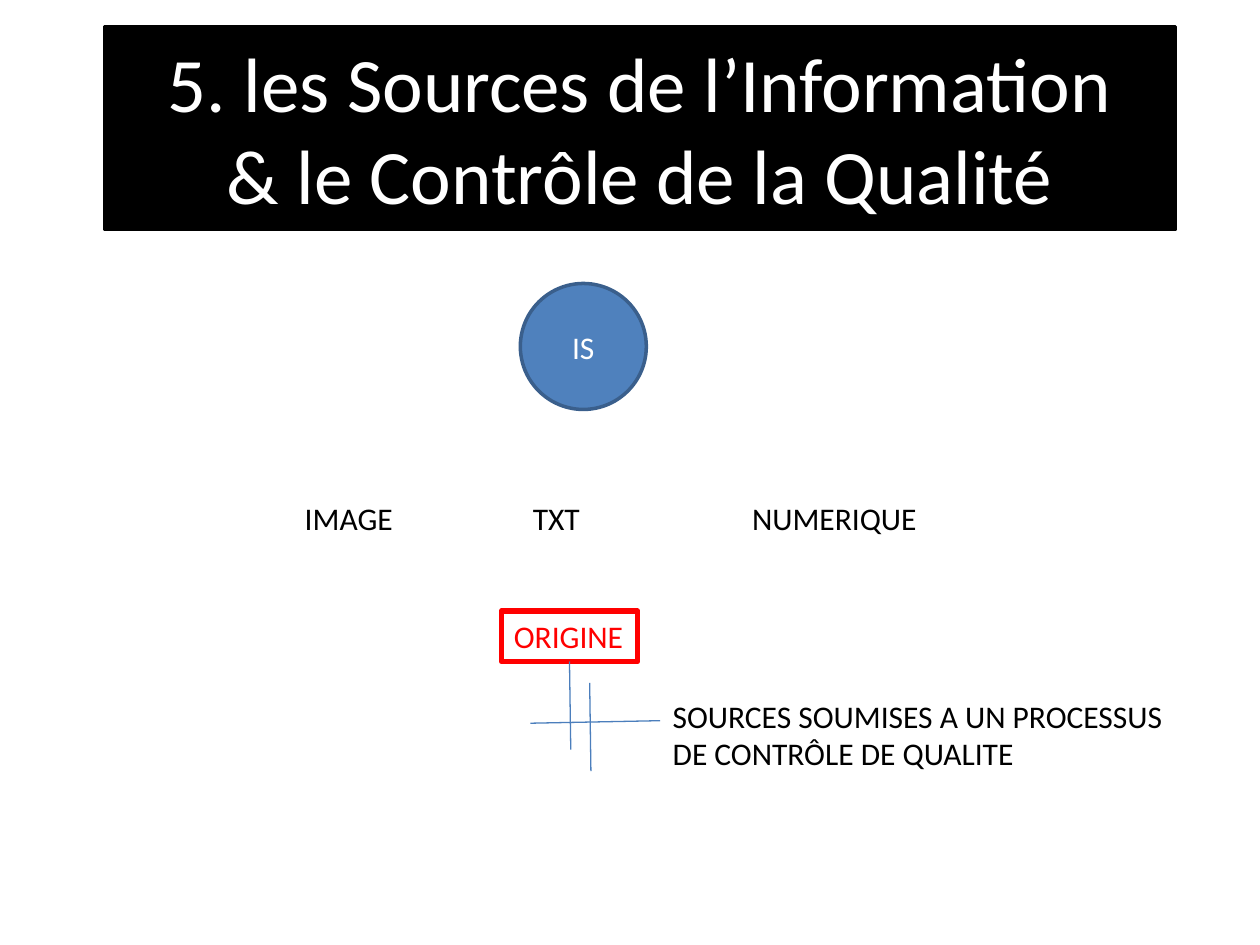
from dataclasses import dataclass
from typing import Optional

from lxml import etree
from pptx import Presentation
from pptx import util as u
from pptx.dml.color import RGBColor
from pptx.enum import shapes, text
from pptx.oxml.ns import qn

COLUMNS, ROWS = 100, 75
COLORS = {
    "black": "000000",
    "white": "FFFFFF",
    "blue": "4F81BD",
    "blue_edge": "3A5F8C",
    "blue_line": "4B7EBC",
    "red": "FF0000",
}


@dataclass
class Area:
    left: float
    top: float
    width: float
    height: float


@dataclass
class Label:
    words: str
    area: Area
    color: str = "black"
    border: Optional[str] = None


@dataclass
class Stroke:
    start: tuple[float, float]
    end: tuple[float, float]
    origin: Optional[str] = None


LABEL_ROW, LABEL_HEIGHT = 39.1, 4
LABELS = [
    Label("IMAGE", Area(23.2, LABEL_ROW, 9.1, LABEL_HEIGHT)),
    Label("TXT", Area(41.3, LABEL_ROW, 5.8, LABEL_HEIGHT)),
    Label("NUMERIQUE", Area(58.7, LABEL_ROW, 15.2, LABEL_HEIGHT)),
    Label("ORIGINE", Area(39.8, 48.5, 10.8, LABEL_HEIGHT), "red", "red"),
    Label("SOURCES SOUMISES A UN PROCESSUS\nDE CONTRÔLE DE QUALITE",
          Area(52.4, 54.8, 41.2, 7.1)),
]
STROKES = [
    Stroke((45.2, 52.5), (45.3, 59.5), "ORIGINE"),
    Stroke((42.1, 57.4), (52.4, 57.2)),
    Stroke((46.8, 54.2), (46.9, 61.2)),
]

deck = Presentation()
deck.slide_width, deck.slide_height = u.Inches(10), u.Inches(7.5)


def across(columns: float) -> int:
    return round(deck.slide_width * columns / COLUMNS)


def down(rows: float) -> int:
    return round(deck.slide_height * rows / ROWS)


def place(area: Area) -> tuple[int, int, int, int]:
    return across(area.left), down(area.top), across(area.width), down(area.height)


def rgb(name: str) -> RGBColor:
    return RGBColor.from_string(COLORS[name])


def write(box, words: str, *, size: float = 18, color: str = "black",
          align=text.PP_ALIGN.LEFT, anchor=text.MSO_ANCHOR.TOP,
          wrap: bool = True, fit=text.MSO_AUTO_SIZE.NONE) -> None:
    frame = box.text_frame
    frame.text = words
    frame.word_wrap = wrap
    frame.auto_size = fit
    frame.vertical_anchor = anchor
    for para in frame.paragraphs:
        para.alignment = align
        for span in para.runs:
            span.font.name = "Calibri"
            span.font.size = u.Pt(size)
            span.font.color.rgb = rgb(color)


def paint(box, fill: Optional[str], border: str, weight: float) -> None:
    if fill:
        box.fill.solid()
        box.fill.fore_color.rgb = rgb(fill)
    else:
        box.fill.background()
    box.line.color.rgb = rgb(border)
    box.line.width = u.Pt(weight)


def draw_title(page) -> None:
    title = page.shapes.title
    title.left, title.top, title.width, title.height = place(Area(8.3, 2.1, 85, 16.1))
    paint(title, "black", "black", 2)
    write(title, "5. les Sources de l’Information\v& le Contrôle de la Qualité",
          size=44, color="white", align=text.PP_ALIGN.CENTER,
          anchor=text.MSO_ANCHOR.MIDDLE)


def draw_circle(page) -> None:
    circle = page.shapes.add_shape(shapes.MSO_SHAPE.OVAL, *place(Area(41.3, 22.5, 10, 10)))
    circle.shadow.inherit = False
    paint(circle, "blue", "blue_edge", 2)
    write(circle, "IS", color="white", align=text.PP_ALIGN.CENTER,
          anchor=text.MSO_ANCHOR.MIDDLE)


def draw_label(page, label: Label):
    if label.border:
        box = page.shapes.add_shape(shapes.MSO_SHAPE.RECTANGLE, *place(label.area))
        box.shadow.inherit = False
        paint(box, None, label.border, 3.25)
    else:
        box = page.shapes.add_textbox(*place(label.area))
    write(box, label.words, color=label.color, wrap=False,
          fit=text.MSO_AUTO_SIZE.SHAPE_TO_FIT_TEXT)
    return box


def draw_stroke(page, stroke: Stroke, boxes: dict) -> None:
    line = page.shapes.add_connector(
        shapes.MSO_CONNECTOR.STRAIGHT,
        across(stroke.start[0]), down(stroke.start[1]),
        across(stroke.end[0]), down(stroke.end[1]))
    if stroke.origin:
        line.begin_connect(boxes[stroke.origin], 2)
    line.line.color.rgb = rgb("blue_line")
    line.line.width = u.Pt(0.75)
    etree.SubElement(line._element.spPr, qn("a:effectLst"))


def main() -> None:
    page = deck.slides.add_slide(deck.slide_layouts[0])
    subtitle = page.placeholders[1].element
    subtitle.getparent().remove(subtitle)
    draw_title(page)
    draw_circle(page)
    boxes = {label.words: draw_label(page, label) for label in LABELS}
    for stroke in STROKES:
        draw_stroke(page, stroke, boxes)
    deck.save("out.pptx")


if __name__ == "__main__":
    main()
